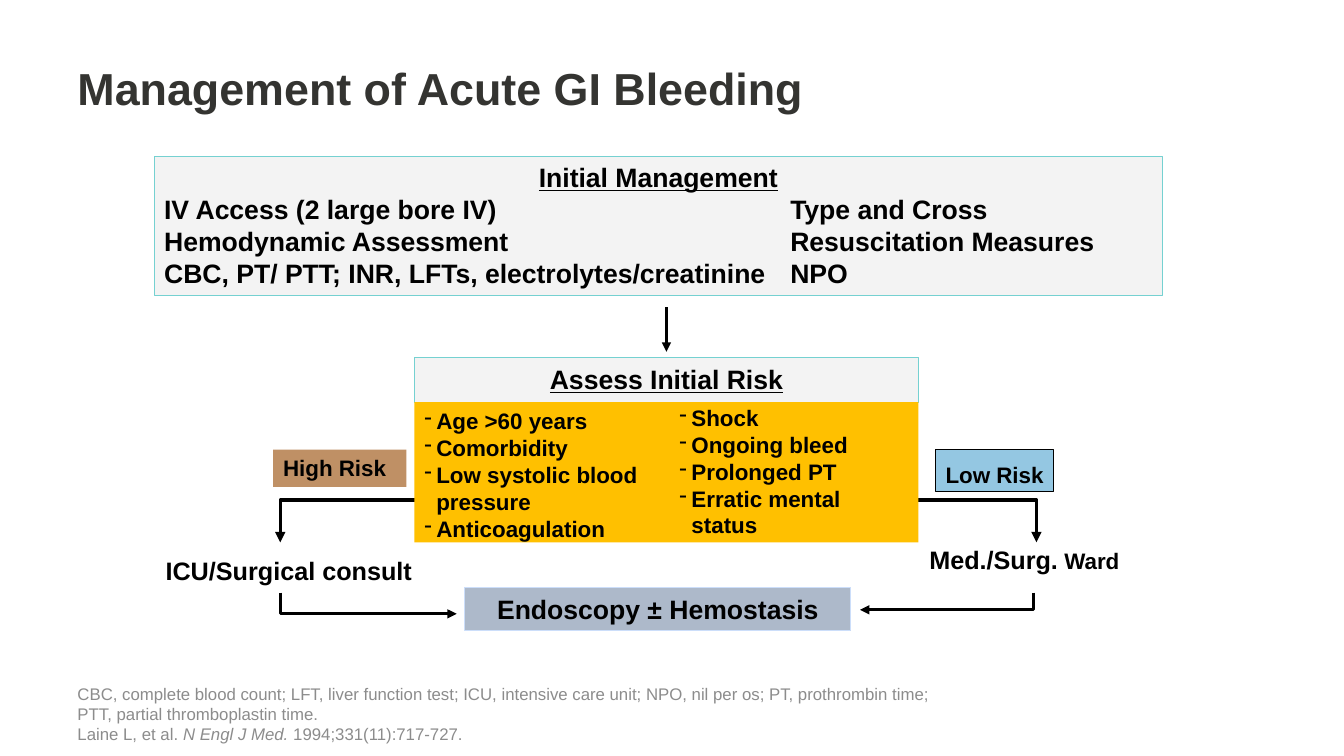
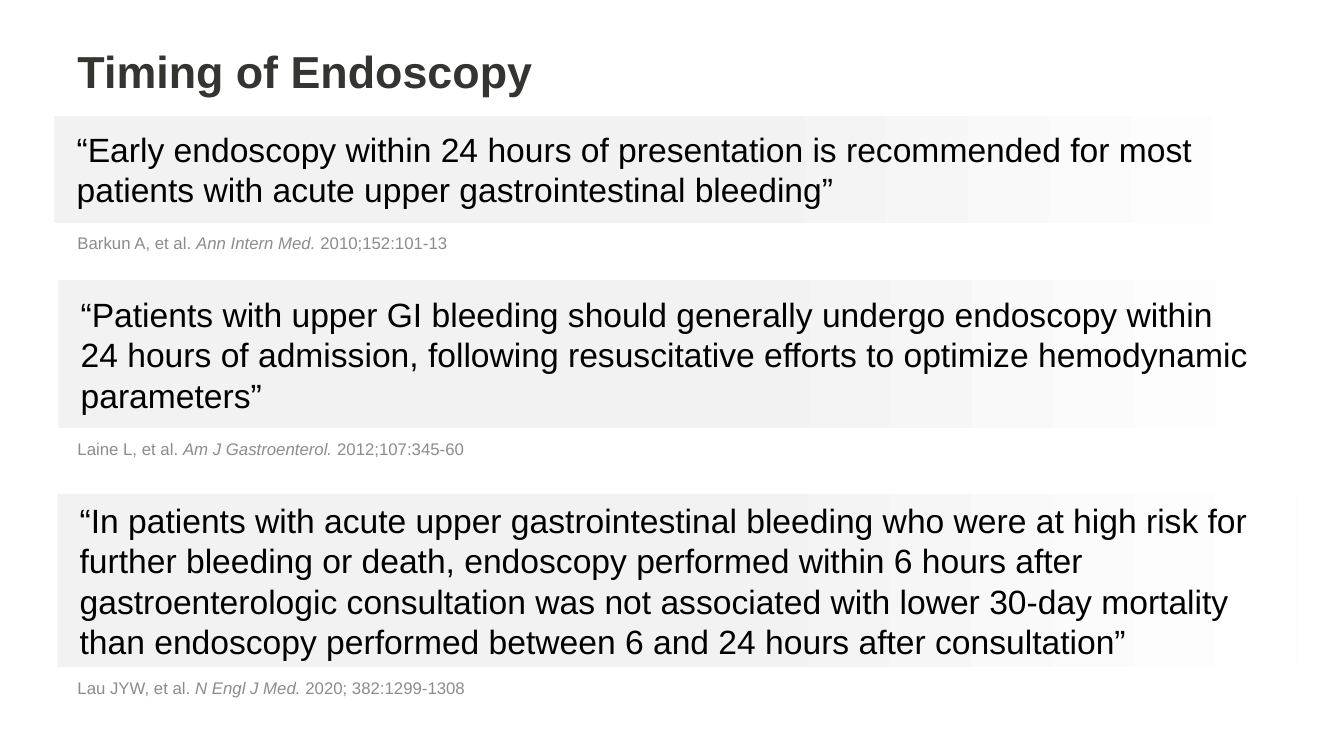
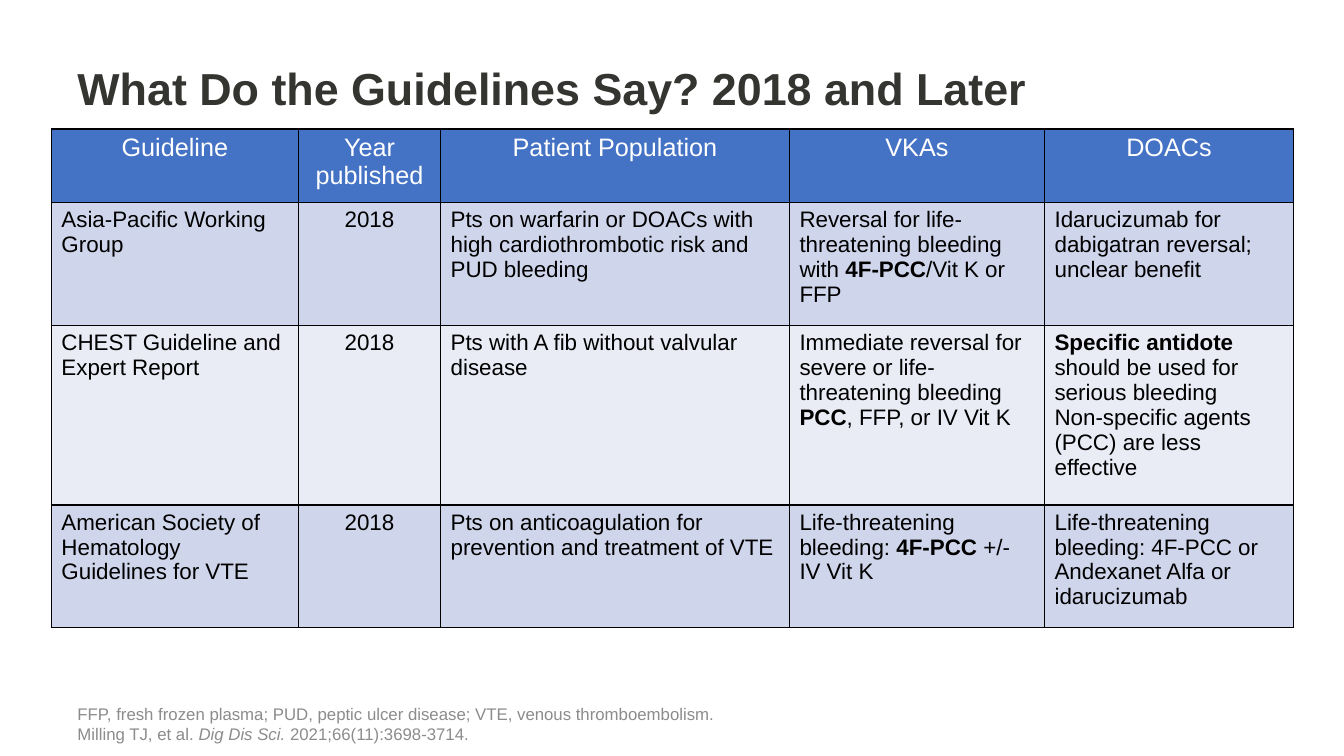
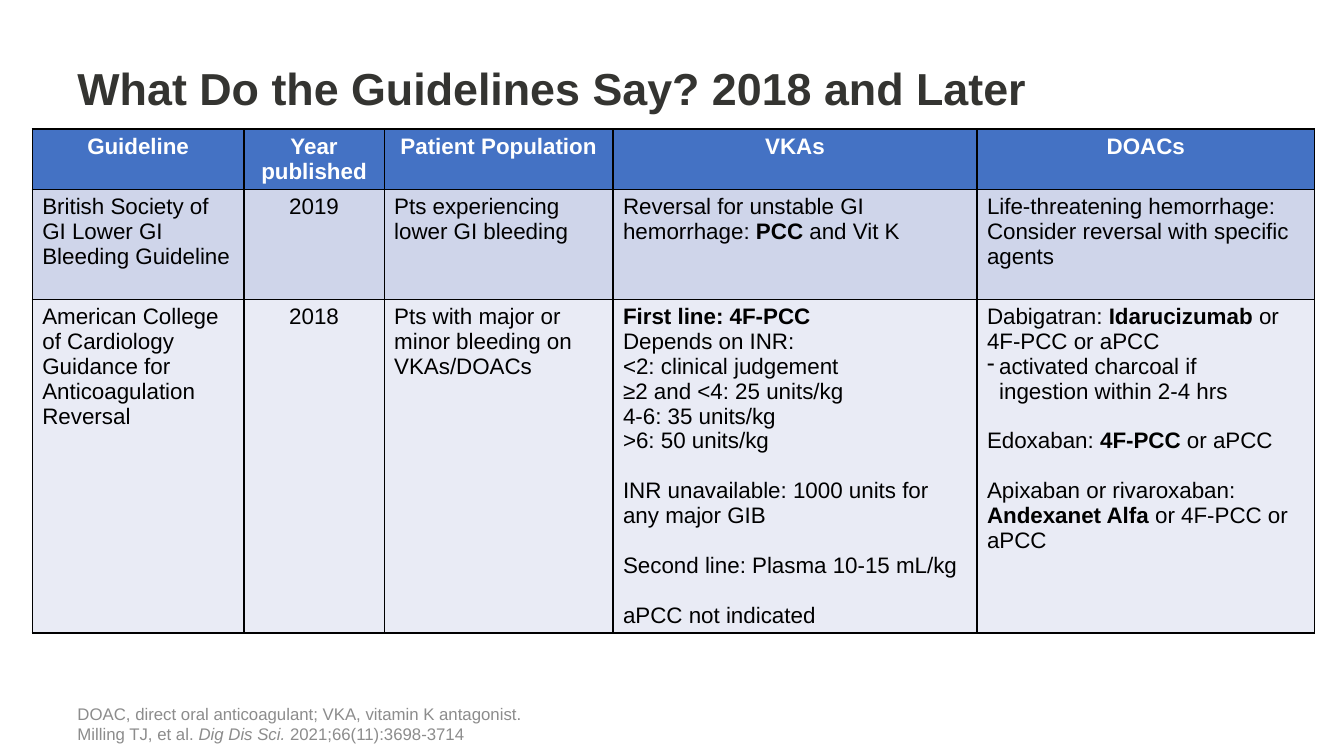
from lxml import etree
from pptx import Presentation
from pptx import util as u
from pptx.dml.color import RGBColor
from pptx.enum import shapes, text
from pptx.oxml import ns

FONT = "Arial"
BLACK, WHITE, TITLE, NOTE = "000000", "FFFFFF", "343431", "8C8C8C"
PANEL, PANEL_LINE = "F3F3F3", "75D1D1"
HEADER, ROWS = "4472C4", ("CFD5EA", "E9EBF5")
LEFT, HANG = 0.67, 0.12
GAP, BULLET = "^", "- "
CENTER = text.PP_ALIGN.CENTER
TOP, MIDDLE, BOTTOM = text.MSO_ANCHOR.TOP, text.MSO_ANCHOR.MIDDLE, text.MSO_ANCHOR.BOTTOM


def rgb(value):
    """Turn a hex string into a colour."""
    return RGBColor.from_string(value)


def inches(*values):
    """Turn numbers into lengths."""
    return [u.Inches(v) for v in values]


def sub(parent, tag, **attrs):
    """Append a drawing element with the given attributes."""
    return etree.SubElement(parent, ns.qn("a:" + tag), **attrs)


def style(r, size, color, bold=False, italic=False):
    """Set the font of a run."""
    r.font.name, r.font.size = FONT, u.Pt(size)
    r.font.color.rgb = rgb(color)
    r.font.bold, r.font.italic = bold, italic


def write(tf, lines, size, color=BLACK, bold=False, mark="bold", align=None, pitch=1.2):
    """Write paragraphs; asterisks enclose marked runs, prefixes give bullets and gaps."""
    for i, line in enumerate(lines):
        p = tf.paragraphs[0] if i == 0 else tf.add_paragraph()
        if line.startswith(BULLET):
            line = line.removeprefix(BULLET)
            pPr = p._p.get_or_add_pPr()
            pPr.set("marL", str(u.Inches(HANG)))
            pPr.set("indent", str(u.Inches(-HANG)))
            sub(pPr, "buChar", char="-")
        if line.startswith(GAP):
            line = line.removeprefix(GAP)
            p.space_before = u.Pt(size * pitch)
        p.line_spacing = u.Pt(size * pitch)
        p.alignment = align
        for j, part in enumerate(line.split("*")):
            for k, piece in enumerate(part.split("\v")):
                if k:
                    p.add_line_break()
                if piece:
                    r = p.add_run()
                    r.text = piece
                    marked = j % 2 == 1
                    style(r, size, color, bold or marked and mark == "bold",
                          marked and mark == "italic")


def frame(sp, anchor=TOP, wrap=True, left=0.1, right=0.1, top=0.05):
    """Prepare the text frame of a shape and return it."""
    tf = sp.text_frame
    tf.word_wrap, tf.vertical_anchor = wrap, anchor
    tf.margin_left, tf.margin_right, tf.margin_top = inches(left, right, top)
    return tf


def label(s, box, lines, size, anchor=TOP, wrap=True, **kw):
    """Add a text box."""
    tf = frame(s.shapes.add_textbox(*inches(*box)), anchor, wrap)
    write(tf, lines, size, **kw)
    return tf


def panel(s, box, fill=None, line=None):
    """Add a plain rectangle."""
    sp = s.shapes.add_shape(shapes.MSO_SHAPE.RECTANGLE, *inches(*box))
    sp.shadow.inherit = False
    if fill:
        sp.fill.solid()
        sp.fill.fore_color.rgb = rgb(fill)
    if line:
        sp.line.color.rgb, sp.line.width = rgb(line), u.Pt(0.75)
    else:
        sp.line.fill.background()
    return sp


def arrow(s, points, width=2.25, both=False):
    """Draw a straight or bent arrow through the points."""
    pts = [inches(*pt) for pt in points]
    if len(pts) == 2:
        sp = s.shapes.add_connector(shapes.MSO_CONNECTOR.STRAIGHT, *pts[0], *pts[1])
    else:
        fb = s.shapes.build_freeform(*pts[0], scale=1.0)
        fb.add_line_segments(pts[1:], close=False)
        sp = fb.convert_to_shape()
        sp.fill.background()
    sp.line.color.rgb, sp.line.width = rgb(BLACK), u.Pt(width)
    ln = sp.line._get_or_add_ln()
    if both:
        sub(ln, "headEnd", type="triangle")
    sub(ln, "tailEnd", type="triangle")
    sub(sp._element.spPr, "effectLst")


def new_slide(prs, title, height=1.3):
    """Add a blank slide with its title."""
    s = prs.slides.add_slide(prs.slide_layouts[6])
    label(s, (LEFT, 0.22, 11.75, height), [title], 32, MIDDLE, color=TITLE, bold=True)
    return s


def note(s, lines, top=6.95, width=11.75):
    """Add a grey source note whose text ends at the foot of its box."""
    label(s, (LEFT, top, width, 0.48), lines, 12, BOTTOM, color=NOTE, mark="italic")


def initial_management(s, x, y, w, h):
    """Draw the first step with its two tabbed columns."""
    tf = frame(panel(s, (x, y, w, h), PANEL, PANEL_LINE))
    for _ in range(3):
        tf.add_paragraph()
    rows = ["Initial Management",
            "IV Access (2 large bore IV)\tType and Cross",
            "Hemodynamic Assessment\tResuscitation Measures",
            "CBC, PT/ PTT; INR, LFTs, electrolytes/creatinine\tNPO"]
    for p, row in zip(tf.paragraphs, rows):
        p.line_spacing = u.Pt(22.8)
        tabs = sub(p._p.get_or_add_pPr(), "tabLst")
        sub(tabs, "tab", pos=str(u.Inches(6.21)), algn="l")
        r = p.add_run()
        r.text = row
        style(r, 19, BLACK, True)
    heading = tf.paragraphs[0]
    heading.alignment = CENTER
    heading.runs[0].font.underline = True


def risk_box(s, x, y, w):
    """Draw the risk heading above its two columns of factors."""
    head = 0.44
    tf = frame(panel(s, (x, y, w, head), PANEL, PANEL_LINE))
    write(tf, ["Assess Initial Risk"], 19, bold=True, align=CENTER)
    tf.paragraphs[0].runs[0].font.underline = True
    tf = frame(panel(s, (x, y + head, w, 1.39), "FFC000"))
    write(tf, ["- Age >60 years", "- Comorbidity", "- Low systolic blood\vpressure",
               "- Anticoagulation"], 16, bold=True)
    label(s, (x + 2.53, y + head - 0.03, 2.34, 1.7),
          ["- Shock", "- Ongoing bleed", "- Prolonged PT", "- Erratic mental status"],
          16, bold=True)


def management_slide(prs):
    """Build the flow chart slide."""
    s = new_slide(prs, "Management of Acute GI Bleeding")
    arrow(s, [(2.78, 5.38), (2.78, 4.96), (10.28, 4.96), (10.28, 5.38)], 2.5, both=True)
    initial_management(s, 1.53, 1.55, 10, 1.38)
    arrow(s, [(6.61, 3.05), (6.61, 3.49)])
    risk_box(s, 4.11, 3.55, 5)
    tf = frame(panel(s, (2.71, 4.46, 1.32, 0.37), "BF9065"))
    write(tf, ["High Risk"], 16, bold=True)
    tf = frame(panel(s, (9.28, 4.46, 1.17, 0.42), "94C7E2", BLACK), MIDDLE, False, top=0.12)
    write(tf, ["Low Risk"], 16, bold=True, align=CENTER)
    label(s, (1.53, 5.46, 2.67, 0.4), ["ICU/Surgical consult"], 18, bold=True, align=CENTER)
    tf = label(s, (9.11, 5.35, 2.1, 0.4), ["Med./Surg.* Ward*"], 18, wrap=False,
               bold=True, align=CENTER)
    tf.paragraphs[0].runs[1].font.size = u.Pt(16)
    arrow(s, [(2.78, 5.88), (2.78, 6.09), (4.53, 6.09)])
    arrow(s, [(10.25, 5.88), (10.25, 6.05), (8.53, 6.05)])
    tf = frame(panel(s, (4.61, 5.83, 3.83, 0.43), "ADB9CA", "CCDEFA"))
    write(tf, ["Endoscopy ± Hemostasis"], 19, bold=True, align=CENTER)
    note(s, ["CBC, complete blood count; LFT, liver function test; ICU, intensive care unit; "
             "NPO, nil per os; PT, prothrombin time; PTT, partial thromboplastin time.",
             "Laine L, et al. *N Engl J Med. *1994;331(11):717-727."], width=8.98)


def quote(s, x, y, h, words, source):
    """Draw a fading band with a quotation and the source under it."""
    sp = panel(s, (x, y, 12.29, h))
    sp.fill.gradient()
    sp.fill.gradient_angle = 0
    for stop, position, color in zip(sp.fill.gradient_stops, (0.54, 1), ("F2F2F2", WHITE)):
        stop.position, stop.color.rgb = position, rgb(color)
    write(frame(sp, MIDDLE, left=0.22, right=0.44), [words], 24)
    note(s, [source], y + h - 0.13)


def timing_slide(prs):
    """Build the slide of quotations."""
    s = new_slide(prs, "Timing of Endoscopy", 0.96)
    quote(s, 0.54, 1.15, 1.06,
          "“Early endoscopy within 24 hours of presentation is recommended for most "
          "patients with acute upper gastrointestinal bleeding”",
          "Barkun A, et al. *Ann Intern Med. *2010;152:101-13")
    quote(s, 0.58, 2.78, 1.47,
          "“Patients with upper GI bleeding should generally undergo endoscopy within "
          "24 hours of admission, following resuscitative efforts to optimize hemodynamic "
          "parameters”",
          "Laine L, et al. *Am J Gastroenterol. *2012;107:345-60")
    quote(s, 0.57, 4.9, 1.72,
          "“In patients with acute upper gastrointestinal bleeding who were at high risk for "
          "further bleeding or death, endoscopy performed within 6 hours after "
          "gastroenterologic consultation was not associated with lower 30-day mortality "
          "than endoscopy performed between 6 and 24 hours after consultation”",
          "Lau JYW, et al. *N Engl J Med. *2020; 382:1299-1308")


def border(cell):
    """Give a cell thin black borders."""
    tcPr = cell._tc.get_or_add_tcPr()
    for i, side in enumerate(("lnL", "lnR", "lnT", "lnB")):
        ln = sub(tcPr, side, w=str(u.Pt(1)))
        sub(sub(ln, "solidFill"), "srgbClr", val=BLACK)
        tcPr.insert(i, ln)


def guideline_table(s, x, y, widths, heights, body, head_size, head_bold):
    """Draw a guideline table under the shared headings."""
    head = [["Guideline"], ["Year published"], ["Patient Population"], ["VKAs"], ["DOACs"]]
    tbl = s.shapes.add_table(len(heights), len(widths),
                             *inches(x, y, sum(widths), sum(heights))).table
    for col, w in zip(tbl.columns, widths):
        col.width = u.Inches(w)
    for row, h in zip(tbl.rows, heights):
        row.height = u.Inches(h)
    for i, row in enumerate([head] + body):
        for j, lines in enumerate(row):
            cell = tbl.cell(i, j)
            cell.fill.solid()
            cell.fill.fore_color.rgb = rgb(ROWS[(i - 1) % 2] if i else HEADER)
            border(cell)
            write(cell.text_frame, lines, 16 if i else head_size, BLACK if i else WHITE,
                  bold=head_bold and i == 0, align=CENTER if i == 0 or j == 1 else None,
                  pitch=1.11)


def guideline_slide(prs, notes, *table):
    """Build a slide with a guideline table and its notes."""
    s = new_slide(prs, "What Do the Guidelines Say? 2018 and Later")
    guideline_table(s, *table)
    note(s, notes)


FIRST_GUIDELINES = [
    [["Asia-Pacific Working Group"], ["2018"],
     ["Pts on warfarin or DOACs with high cardiothrombotic risk and PUD bleeding"],
     ["Reversal for life-threatening bleeding with *4F-PCC*/Vit K or FFP"],
     ["Idarucizumab for dabigatran reversal; unclear benefit"]],
    [["CHEST Guideline and Expert Report"], ["2018"],
     ["Pts with A fib without valvular disease"],
     ["Immediate reversal for severe or life-threatening bleeding",
      "*PCC*, FFP, or IV Vit K"],
     ["*Specific antidote *should be used for serious bleeding",
      "Non-specific agents (PCC) are less effective"]],
    [["American Society of Hematology Guidelines for VTE"], ["2018"],
     ["Pts on anticoagulation for prevention and treatment of VTE"],
     ["Life-threatening bleeding: *4F-PCC* +/- IV Vit K"],
     ["Life-threatening bleeding: 4F-PCC or Andexanet Alfa or idarucizumab"]],
]

SECOND_GUIDELINES = [
    [["British Society of GI Lower GI Bleeding Guideline"], ["2019"],
     ["Pts experiencing lower GI bleeding"],
     ["Reversal for unstable GI hemorrhage: *PCC *and Vit K"],
     ["Life-threatening hemorrhage: Consider reversal with specific agents"]],
    [["American College of Cardiology Guidance for Anticoagulation Reversal"], ["2018"],
     ["Pts with major or minor bleeding on VKAs/DOACs"],
     ["*First line: 4F-PCC*", "Depends on INR:", "<2: clinical judgement",
      "≥2 and <4: 25 units/kg", "4-6: 35 units/kg", ">6: 50 units/kg",
      "^INR unavailable: 1000 units for any major GIB",
      "^Second line: Plasma 10-15 mL/kg", "^aPCC not indicated"],
     ["Dabigatran: *Idarucizumab *or 4F-PCC or aPCC",
      "- activated charcoal if\vingestion within 2-4 hrs",
      "^Edoxaban: *4F-PCC* or aPCC",
      "^Apixaban or rivaroxaban: *Andexanet Alfa* or 4F-PCC or aPCC"]],
]


def main():
    """Build and save the presentation."""
    prs = Presentation()
    prs.slide_width, prs.slide_height = inches(13.33, 7.5)
    management_slide(prs)
    timing_slide(prs)
    guideline_slide(
        prs, ["FFP, fresh frozen plasma; PUD, peptic ulcer disease; VTE, venous thromboembolism.",
              "Milling TJ, et al. *Dig Dis Sci. *2021;66(11):3698-3714."],
        0.51, 1.28, (2.45, 1.41, 3.46, 2.53, 2.47), (0.73, 1.22, 1.78, 1.22),
        FIRST_GUIDELINES, 18, False)
    guideline_slide(
        prs, ["DOAC, direct oral anticoagulant; VKA, vitamin K antagonist.",
              "Milling TJ, et al. *Dig Dis Sci. *2021;66(11):3698-3714"],
        0.32, 1.28, (2.1, 1.39, 2.27, 3.61, 3.35), (0.6, 1.09, 3.31),
        SECOND_GUIDELINES, 16, True)
    prs.save("out.pptx")


if __name__ == "__main__":
    main()
